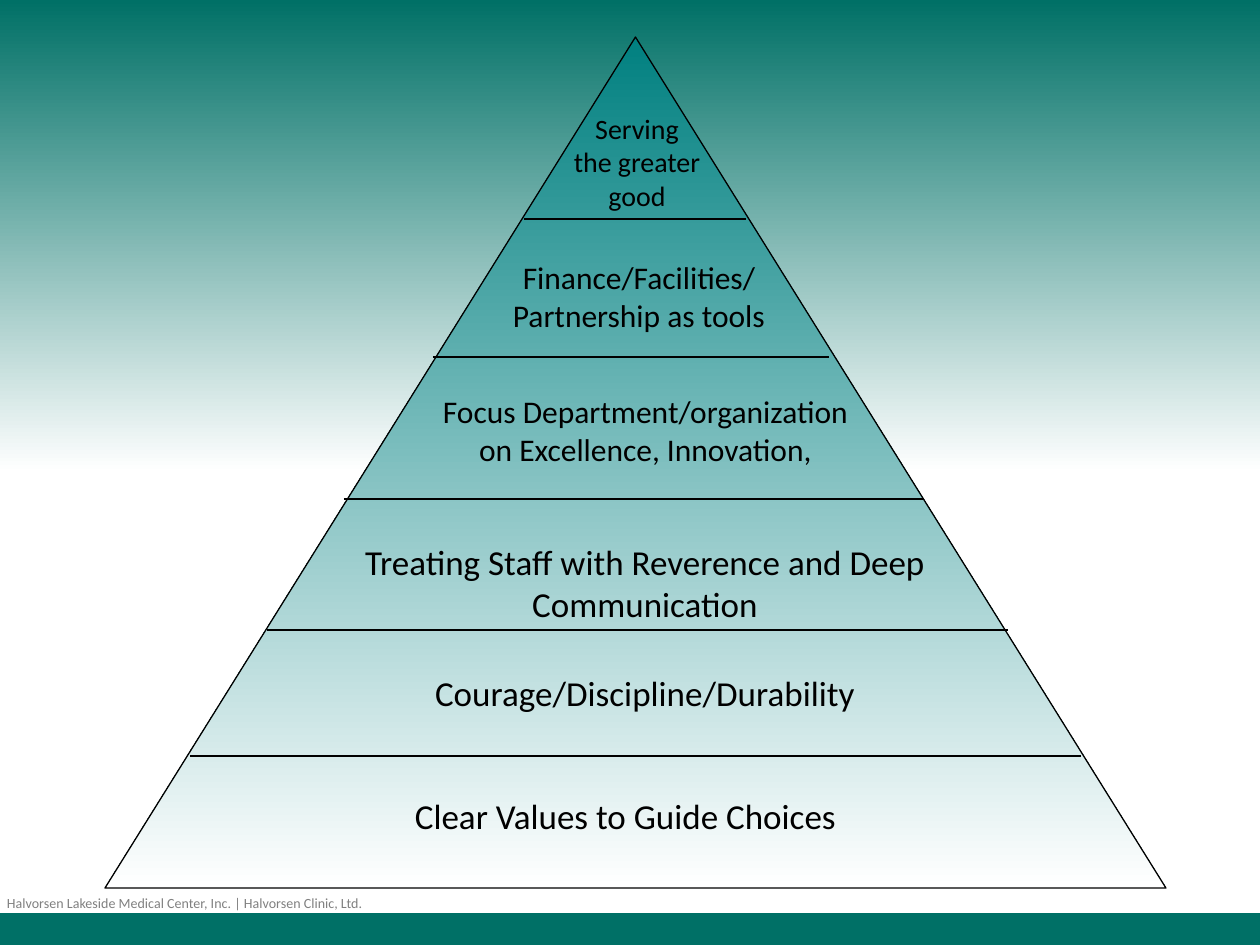
from lxml import etree
from pptx import Presentation
from pptx.dml.color import RGBColor
from pptx.enum import shapes, text
from pptx.oxml.ns import qn
from pptx.util import Pt

PX = 914400 / 126
FONT = "Calibri"
GREEN = RGBColor(0x00, 0x70, 0x66)
TEAL = RGBColor(0x00, 0x80, 0x80)
WHITE = RGBColor(0xFF, 0xFF, 0xFF)
BLACK = RGBColor(0x00, 0x00, 0x00)
GREY = RGBColor(0x80, 0x80, 0x80)

# Content: paragraphs, size in pt, box in px (left, top, width, height)
LEVELS = [
    (["Serving", "the greater good"], 16, (553, 105, 168, 115)),
    (["Finance/Facilities/", "Partnership as tools"], 18, (476, 252, 326, 89)),
    (["Focus Department/organization on Excellence, Innovation,"], 18,
     (416, 386, 459, 89)),
    (["Treating Staff with Reverence and Deep Communication"], 20,
     (325, 534, 640, 97)),
    (["Courage/Discipline/Durability"], 20, (255, 665, 780, 55)),
    (["Clear Values to Guide Choices"], 20, (325, 788, 601, 55)),
]
# Dividers between levels: left, right, y
DIVIDERS = [(524, 746, 219), (433, 829, 357), (344, 924, 499),
            (267, 1008, 630), (190, 1081, 756)]
FOOTER = "Halvorsen Lakeside Medical Center, Inc. | Halvorsen Clinic, Ltd."


def emu(*lengths):
    return [round(n * PX) for n in lengths]


def shade(fill, top, bottom, end=1.0):
    """Vertical gradient that reaches the bottom colour at end."""
    fill.gradient()
    fill.gradient_angle = 270
    for stop, color, position in zip(fill.gradient_stops, (top, bottom), (0, end)):
        stop.color.rgb = color
        stop.position = position


def add_text(slide, lines, size, box, color=BLACK, align=text.PP_ALIGN.CENTER):
    tf = slide.shapes.add_textbox(*emu(*box)).text_frame
    tf.word_wrap = True
    for i, line in enumerate(lines):
        p = tf.paragraphs[0] if i == 0 else tf.add_paragraph()
        p.alignment = align
        r = p.add_run()
        r.text = line
        r.font.color.rgb = color
        for name, value in {"name": FONT, "size": Pt(size)}.items():
            setattr(r.font, name, value)
    return tf


def add_divider(slide, left, right, y):
    line = slide.shapes.add_connector(
        shapes.MSO_CONNECTOR.STRAIGHT, *emu(left, y, right, y))
    line.line.color.rgb = BLACK
    line.line.width = Pt(0.75)
    etree.SubElement(line._element.spPr, qn("a:effectLst"))


def main():
    prs = Presentation()
    prs.slide_width, prs.slide_height = emu(1260, 945)
    s = prs.slides.add_slide(prs.slide_layouts[6])
    shade(s.background.fill, GREEN, WHITE, 0.5)

    # Footer bar and text
    bar = s.shapes.add_shape(shapes.MSO_SHAPE.RECTANGLE, *emu(0, 913, 1260, 32))
    bar.shadow.inherit = False
    bar.fill.solid()
    bar.fill.fore_color.rgb = GREEN
    bar.line.fill.background()
    tf = add_text(s, [FOOTER], 8, (7, 888, 401, 30), GREY, text.PP_ALIGN.LEFT)
    tf.margin_left = 0

    # Pyramid
    pyramid = s.shapes.add_shape(
        shapes.MSO_SHAPE.ISOSCELES_TRIANGLE, *emu(105, 37, 1061, 851))
    pyramid.shadow.inherit = False
    shade(pyramid.fill, TEAL, WHITE)
    pyramid.line.color.rgb = BLACK
    pyramid.line.width = Pt(0.75)

    # Dividers and levels
    for divider in DIVIDERS:
        add_divider(s, *divider)
    for level in LEVELS:
        add_text(s, *level)

    prs.save("out.pptx")


if __name__ == "__main__":
    main()
